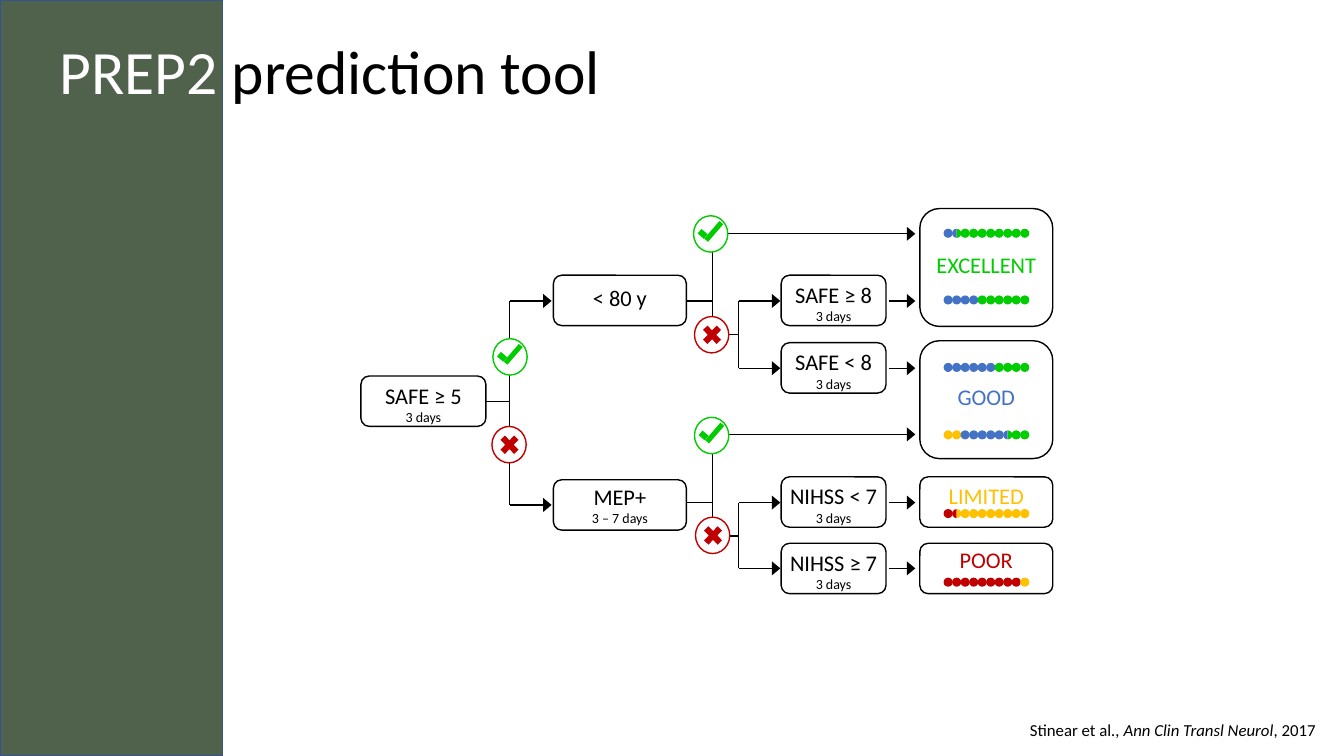
from lxml.etree import SubElement
from pptx import Presentation
from pptx.dml.color import RGBColor
from pptx.enum.shapes import MSO_CONNECTOR, MSO_SHAPE
from pptx.enum.text import MSO_ANCHOR, PP_ALIGN
from pptx.oxml.ns import qn
from pptx.util import Pt

BLACK = RGBColor(0x00, 0x00, 0x00)
WHITE = RGBColor(0xFF, 0xFF, 0xFF)
OLIVE = RGBColor(0x50, 0x61, 0x4C)
NAVY = RGBColor(0x32, 0x54, 0x91)
GREEN = RGBColor(0x00, 0xCC, 0x00)
BLUE = RGBColor(0x44, 0x72, 0xC4)
GOLD = RGBColor(0xFF, 0xC0, 0x00)
RED = RGBColor(0xC0, 0x00, 0x00)
HUES = {"G": GREEN, "B": BLUE, "Y": GOLD, "R": RED}

TITLE = [("PREP2 ", {"color": WHITE}), ("prediction tool", {})]
SOURCE = [("Stinear et al", {}), ("., Ann Clin Transl Neurol", {"italic": True}),
          (", 2017", {})]

# Test, time, left, top, width, gap above the text
TESTS = [
    ("SAFE ≥ 5", "3 days", 257.8, 268.6, 89.3, 2.4),
    ("< 80 y", "", 395.3, 196.6, 95, 4.7),
    ("MEP+", "3 – 7 days", 395.3, 342.7, 95, 0.4),
    ("SAFE ≥ 8", "3 days", 558, 196.6, 74.9, 2.4),
    ("SAFE < 8", "3 days", 558, 244.8, 74.9, 2.4),
    ("NIHSS < 7", "3 days", 558, 340.6, 74.9, 2.4),
    ("NIHSS ≥ 7", "3 days", 558, 388.1, 74.9, 2.4),
]

# Outcome, hue, top, height, gap above the text
GOALS = [
    ("EXCELLENT", GREEN, 149, 84.2, 26.2),
    ("GOOD", BLUE, 243.4, 84.2, 26.2),
    ("LIMITED", GOLD, 340.6, 36, 1.8),
    ("POOR", RED, 388.1, 36, 0.4),
]

# Top of each row of dots; two letters make a dot of two halves
DOTS = [
    (163.4, "B BG G G G G G G G G"),
    (211, "B B B B G G G G G G"),
    (259.2, "B B B B B B G G G G"),
    (307.4, "Y Y B B B B B BG G G"),
    (363.6, "R RY Y Y Y Y Y Y Y Y"),
    (412.6, "R R R R R R R R R Y"),
]

# Left and top of each sign
TICKS = [(352.1, 241.9), (495.4, 154.1), (496.1, 298.1)]
CROSSES = [(351.4, 304.6), (496.1, 226.1), (496.8, 369.4)]

# Upright lines of the tree and the ends of its arrows
STEM, FORK, TWIG = 364, 509, 527.6
MID, LEAF, GOAL = 394, 557.4, 653.8
ROWS = [215, 263, 359, 406]
ARROWS = ([(635, GOAL, y) for y in ROWS] + [(TWIG, LEAF, y) for y in ROWS]
          + [(FORK, GOAL, y) for y in (167, 310.3)]
          + [(STEM, MID, y) for y in (215, 360.7)])
STUBS = [(346.6, STEM, 286.6), (490.6, FORK, 215), (490.6, FORK, 359),
         (FORK, TWIG, 239), (FORK, TWIG, 383)]
STEMS = [(STEM, 215, 360.7), (FORK, 167, 239), (FORK, 310.3, 370),
         (TWIG, 215, 263), (TWIG, 359, 406)]

deck = Presentation()
deck.slide_width, deck.slide_height = Pt(960), Pt(540)
slide = deck.slides.add_slide(deck.slide_layouts[6])
shapes = slide.shapes


def write(shape, lines, size=16, color=BLACK, align=PP_ALIGN.LEFT,
          anchor=MSO_ANCHOR.TOP, wrap=True, side=7.2, top=3.6, space=None):
    """Fill a shape with lines, each a list of (text, format) runs."""
    frame = shape.text_frame
    frame.word_wrap = wrap
    frame.vertical_anchor = anchor
    frame.margin_left = frame.margin_right = Pt(side)
    frame.margin_top, frame.margin_bottom = Pt(top), Pt(0 if side == 0 else 3.6)
    for i, line in enumerate(lines):
        para = frame.paragraphs[0] if i == 0 else frame.add_paragraph()
        para.alignment = align
        if space:
            para.line_spacing = space
        for words, style in line:
            run = para.add_run()
            run.text = words
            font = run.font
            font.name = "Calibri"
            font.size = Pt(style.get("size", size))
            font.italic = style.get("italic", False)
            font.color.rgb = style.get("color", color)


def draw(kind, x, y, w, h, fill=None, edge=None, turn=0):
    shape = shapes.add_shape(kind, Pt(x), Pt(y), Pt(w), Pt(h))
    shape.shadow.inherit = False
    shape.rotation = turn
    if fill is None:
        shape.fill.background()
    else:
        shape.fill.solid()
        shape.fill.fore_color.rgb = fill
    if edge is None:
        shape.line.fill.background()
    else:
        shape.line.color.rgb = edge
        shape.line.width = Pt(1)
    return shape


def label(box, lines, gap, color=BLACK):
    write(box, lines, color=color, align=PP_ALIGN.CENTER, side=0, top=gap)


def link(x1, y1, x2, y2, arrow=False):
    line = shapes.add_connector(MSO_CONNECTOR.STRAIGHT, Pt(x1), Pt(y1), Pt(x2), Pt(y2))
    line.line.color.rgb = BLACK
    line.line.width = Pt(1)
    if arrow:
        SubElement(line.line._get_or_add_ln(), qn("a:tailEnd"), type="triangle", w="lg")
    SubElement(line._element.spPr, qn("a:effectLst"))


def ring(x, y, hue):
    draw(MSO_SHAPE.OVAL, x, y, 24.5, 26, WHITE, hue)


def dot(x, y, code):
    if len(code) == 1:
        draw(MSO_SHAPE.OVAL, x, y, 6.5, 6.5, HUES[code])
        return
    for key, turn in zip(code, (0, 180)):
        half = draw(MSO_SHAPE.CHORD, x, y, 6.5, 6.5, HUES[key], turn=turn)
        # Left half: 90 to 270 degrees, in units of 5/3 degree
        half.adjustments[0], half.adjustments[1] = 54, 162


for name, time, x, y, w, gap in TESTS:
    box = draw(MSO_SHAPE.ROUNDED_RECTANGLE, x, y, w, 36, edge=BLACK)
    lines = [[(name, {})]] + ([[(time, {"size": 10})]] if time else [])
    label(box, lines, gap)

for name, hue, y, h, gap in GOALS:
    box = draw(MSO_SHAPE.ROUNDED_RECTANGLE, 657, y, 95, h, edge=BLACK)
    label(box, [[(name, {})]], gap, hue)

for x1, x2, y in ARROWS:
    link(x1, y, x2, y, arrow=True)
for x1, x2, y in STUBS:
    link(x1, y, x2, y)
for x, y1, y2 in STEMS:
    link(x, y1, x, y2)

for y, row in DOTS:
    for i, code in enumerate(row.split()):
        dot(674 + 6.08 * i, y, code)

for x, y in TICKS:
    ring(x, y, GREEN)
    draw(MSO_SHAPE.RECTANGLE, x + 3.6, y + 10.8, 5.8, 4.3, GREEN, turn=40.9)
    draw(MSO_SHAPE.RECTANGLE, x + 6.1, y + 9.4, 16.6, 3.6, GREEN, turn=130.9)
for x, y in CROSSES:
    ring(x, y, RED)
    draw(MSO_SHAPE.MATH_MULTIPLY, x + 3.2, y + 3.4, 18.7, 19.4, RED)

cite = shapes.add_textbox(Pt(728.6), Pt(510.5), Pt(221), Pt(21.6))
write(cite, [SOURCE], size=12, wrap=False)

draw(MSO_SHAPE.RECTANGLE, 0, 0, 158.8, 540, OLIVE, NAVY)
title = shapes.add_textbox(Pt(35.3), Pt(0.7), Pt(424), Pt(104.4))
write(title, [TITLE], size=44, anchor=MSO_ANCHOR.MIDDLE, space=0.9)

deck.save("out.pptx")
